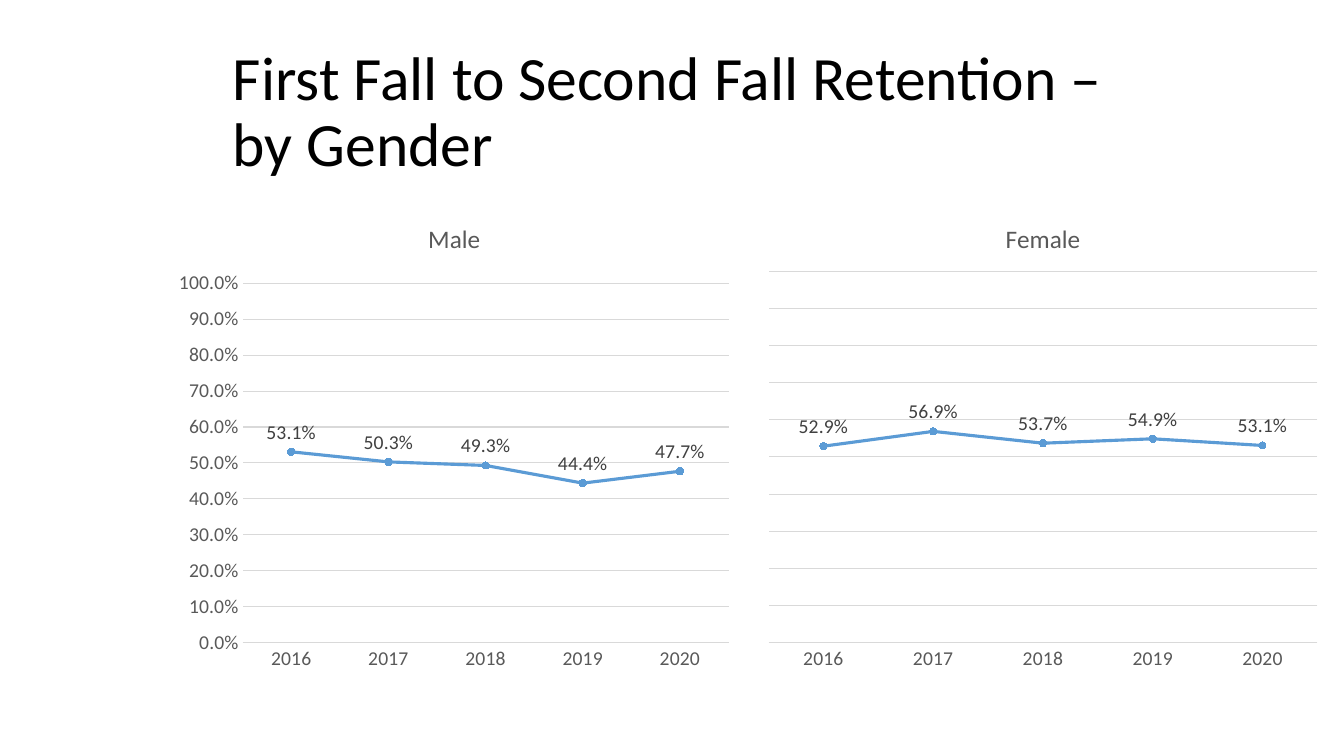
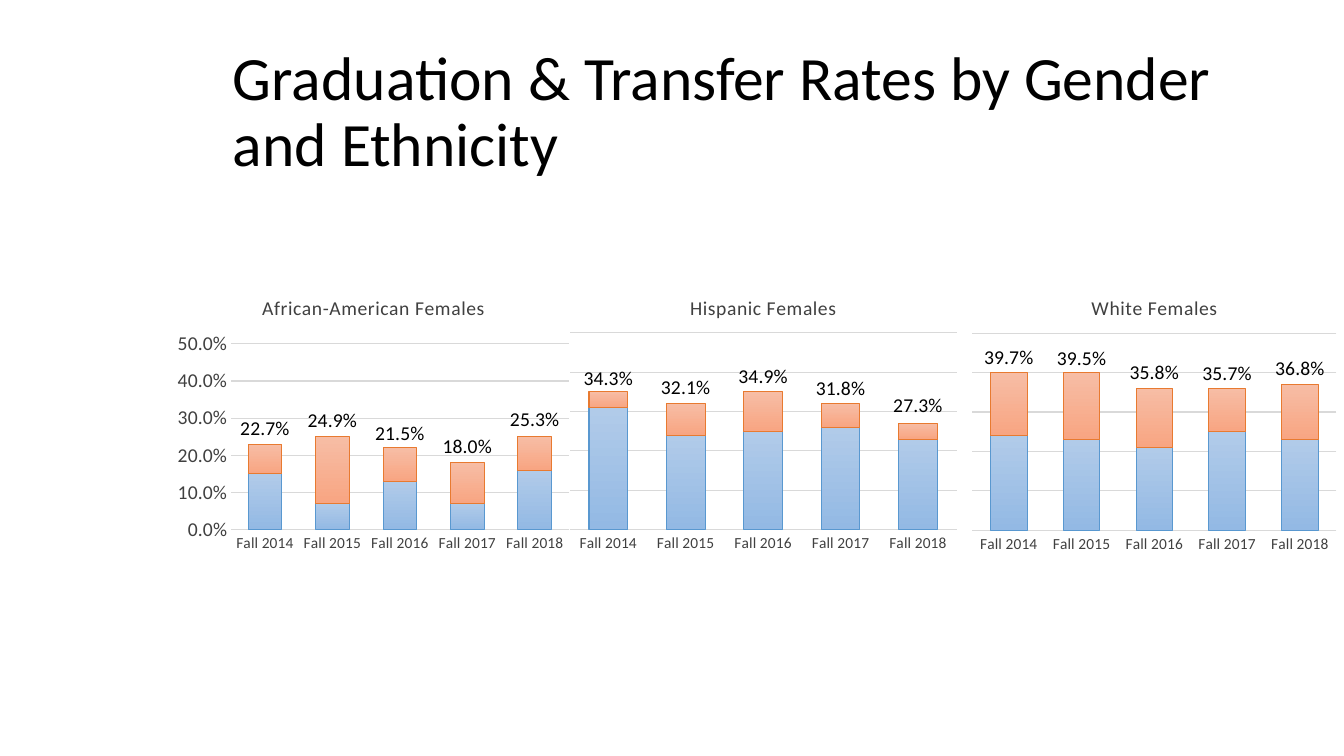
import pptx
import pptx.util
import pptx.chart.data
import pptx.dml.color
import pptx.enum.chart
import pptx.enum.text
import pptx.oxml
import pptx.oxml.ns
from lxml import etree

FONT = "Calibri"
PERCENT = "0.0%"
BLACK, DARK_GREY, MID_GREY, GRID_GREY = "000000", "404040", "595959", "D9D9D9"
LINE_BLUE = "5B9BD5"
# gradient top, gradient bottom, outline
BAR_COLOURS = [("B1CBE9", "93B9E4", "5998D0"), ("F7BDA5", "F8A582", "E87A30")]

# Plot areas are shares of the chart's frame: left, top, width, height.
RETENTION_TITLE = "First Fall to Second Fall Retention –\vby Gender"
RETENTION_YEARS = ["2016", "2017", "2018", "2019", "2020"]
RETENTION = [
    {"title": "Male", "frame": (1.67, 2, 5.67, 4.76), "plot": (0.13, 0.17, 0.85, 0.75),
     "rates": [0.531, 0.503, 0.493, 0.444, 0.477]},
    {"title": "Female", "frame": (7.51, 2, 5.67, 4.76), "plot": (0.02, 0.145, 0.96, 0.775),
     "rates": [0.529, 0.569, 0.537, 0.549, 0.531]},
]

OUTCOMES_TITLE = "Graduation & Transfer Rates by Gender and Ethnicity"
OUTCOMES_COHORTS = [f"Fall {year}" for year in range(2014, 2019)]
OUTCOMES = [
    {"title": "African-American Females", "frame": (1.69, 2.78, 4.03, 2.75),
     "plot": (0.15, 0.23, 0.83, 0.67),
     "parts": [[0.15, 0.07, 0.13, 0.07, 0.16], [0.08, 0.18, 0.09, 0.11, 0.09]],
     "totals": [0.227, 0.249, 0.215, 0.18, 0.253]},
    {"title": "Hispanic Females", "frame": (5.57, 2.78, 4, 2.75),
     "plot": (0.02, 0.19, 0.96, 0.71),
     "parts": [[0.31, 0.24, 0.25, 0.26, 0.23], [0.04, 0.08, 0.1, 0.06, 0.04]],
     "totals": [0.343, 0.321, 0.349, 0.318, 0.273]},
    {"title": "White Females", "frame": (9.57, 2.78, 3.76, 2.76),
     "plot": (0.02, 0.19, 0.96, 0.71),
     "parts": [[0.24, 0.23, 0.21, 0.25, 0.23], [0.16, 0.17, 0.15, 0.11, 0.14]],
     "totals": [0.397, 0.395, 0.358, 0.357, 0.368]},
]


def rgb(colour):
    return pptx.dml.color.RGBColor.from_string(colour)


def set_font(font, size, colour):
    font.name = FONT
    font.size = pptx.util.Pt(size)
    font.bold = False
    font.color.rgb = rgb(colour)


def set_line(line, colour, width=0.75):
    line.color.rgb = rgb(colour)
    line.width = pptx.util.Pt(width)


def add_titled_slide(deck, heading):
    slide = deck.slides.add_slide(deck.slide_layouts[5])
    title = slide.shapes.title
    title.left, title.top, title.width, title.height = map(
        pptx.util.Inches, (2.21, 0.4, 10.21, 1.45))
    frame = title.text_frame
    frame.text = heading
    frame.word_wrap = True
    frame.auto_size = pptx.enum.text.MSO_AUTO_SIZE.NONE
    frame.vertical_anchor = pptx.enum.text.MSO_ANCHOR.MIDDLE
    paragraph = frame.paragraphs[0]
    paragraph.alignment = pptx.enum.text.PP_ALIGN.LEFT
    paragraph.line_spacing = 0.9
    for run in paragraph.runs:
        set_font(run.font, 44, BLACK)
    return slide


def place_plot(chart, shares):
    """Fix the inner plot area at the given shares of the chart's frame."""
    area = chart._chartSpace.chart.plotArea
    for old in area.findall(pptx.oxml.ns.qn("c:layout")):
        area.remove(old)
    sizes = "".join(f'<c:{tag} val="{share}"/>' for tag, share in zip("xywh", shares))
    area.insert(0, pptx.oxml.parse_xml(
        f'<c:layout {pptx.oxml.ns.nsdecls("c")}><c:manualLayout>'
        '<c:layoutTarget val="inner"/><c:xMode val="edge"/><c:yMode val="edge"/>'
        f'{sizes}</c:manualLayout></c:layout>'))


def add_rate_chart(slide, kind, group, categories, series, top_rate, colour,
                   title_size, category_size, show_scale):
    data = pptx.chart.data.CategoryChartData(number_format=PERCENT)
    data.categories = categories
    for name, values in series:
        data.add_series(name, values)
    chart = slide.shapes.add_chart(
        kind, *map(pptx.util.Inches, group["frame"]), data).chart
    set_font(chart.font, 10, BLACK)
    chart.has_legend = False
    chart.has_title = True
    chart.chart_title.include_in_layout = False
    heading = chart.chart_title.text_frame
    heading.text = group["title"]
    set_font(heading.paragraphs[0].runs[0].font, title_size, colour)

    no_tick = pptx.enum.chart.XL_TICK_MARK.NONE
    for axis, size in ((chart.category_axis, category_size), (chart.value_axis, 14)):
        axis.major_tick_mark = axis.minor_tick_mark = no_tick
        set_font(axis.tick_labels.font, size, colour)
    set_line(chart.category_axis.format.line, GRID_GREY)
    scale = chart.value_axis
    scale.minimum_scale, scale.maximum_scale, scale.major_unit = 0, top_rate, 0.1
    scale.has_major_gridlines = True
    set_line(scale.major_gridlines.format.line, GRID_GREY)
    scale.format.line.fill.background()
    scale.tick_labels.number_format = PERCENT
    scale.tick_labels.number_format_is_linked = False
    scale.visible = show_scale
    place_plot(chart, group["plot"])
    return chart


def label_above(series, colour):
    labels = series.data_labels
    labels.show_value = True
    labels.number_format = PERCENT
    labels.number_format_is_linked = False
    labels.position = pptx.enum.chart.XL_LABEL_POSITION.ABOVE
    set_font(labels.font, 14, colour)


def move_last_series_to_line(chart):
    """Turn the last column series into a line on the same axes."""
    qn = pptx.oxml.ns.qn
    columns = chart.plots[0]._element
    totals = columns.findall(qn("c:ser"))[-1]
    for flag in totals.findall(qn("c:invertIfNegative")):
        totals.remove(flag)
    line_plot = pptx.oxml.parse_xml(
        f'<c:lineChart {pptx.oxml.ns.nsdecls("c")}><c:grouping val="standard"/>'
        '<c:varyColors val="0"/><c:marker val="1"/></c:lineChart>')
    line_plot.insert(2, totals)
    for axis_id in columns.findall(qn("c:axId")):
        etree.SubElement(line_plot, qn("c:axId")).set("val", axis_id.get("val"))
    columns.addnext(line_plot)
    return chart.plots[1].series[0]


def add_retention_chart(slide, group, show_scale):
    chart = add_rate_chart(
        slide, pptx.enum.chart.XL_CHART_TYPE.LINE_MARKERS, group, RETENTION_YEARS,
        [(group["title"], group["rates"])], 1, MID_GREY, 18, 14, show_scale)
    chart.plots[0].vary_by_categories = False
    rates = chart.plots[0].series[0]
    rates.smooth = False
    set_line(rates.format.line, LINE_BLUE, 2.25)
    rates.marker.style = pptx.enum.chart.XL_MARKER_STYLE.CIRCLE
    rates.marker.size = 5
    rates.marker.format.fill.solid()
    rates.marker.format.fill.fore_color.rgb = rgb(LINE_BLUE)
    set_line(rates.marker.format.line, LINE_BLUE)
    label_above(rates, DARK_GREY)


def add_outcomes_chart(slide, group, show_scale):
    values = group["parts"] + [group["totals"]]
    series = [(f"Series {number}", rates) for number, rates in enumerate(values, 1)]
    chart = add_rate_chart(
        slide, pptx.enum.chart.XL_CHART_TYPE.COLUMN_STACKED, group, OUTCOMES_COHORTS,
        series, 0.5, DARK_GREY, 14, 11, show_scale)
    heading = chart.chart_title.text_frame.paragraphs[0].runs[0]
    heading.font._element.set("spc", "30")
    totals = move_last_series_to_line(chart)
    totals.smooth = False
    totals.format.line.fill.background()
    totals.marker.style = pptx.enum.chart.XL_MARKER_STYLE.NONE
    label_above(totals, BLACK)

    columns = chart.plots[0]
    columns.vary_by_categories = False
    columns.gap_width = columns.overlap = 100
    for part, (top, bottom, outline) in zip(columns.series, BAR_COLOURS):
        fill = part.format.fill
        fill.gradient()
        fill.gradient_angle = 270
        for stop, colour in zip(fill.gradient_stops, (top, bottom)):
            stop.color.rgb = rgb(colour)
        set_line(part.format.line, outline)


def main():
    deck = pptx.Presentation()
    deck.slide_width = pptx.util.Inches(13.33)
    deck.slide_height = pptx.util.Inches(7.5)
    for heading, groups, add_group_chart in (
            (RETENTION_TITLE, RETENTION, add_retention_chart),
            (OUTCOMES_TITLE, OUTCOMES, add_outcomes_chart)):
        slide = add_titled_slide(deck, heading)
        for position, group in enumerate(groups):
            add_group_chart(slide, group, show_scale=position == 0)
    deck.save("out.pptx")


if __name__ == "__main__":
    main()
